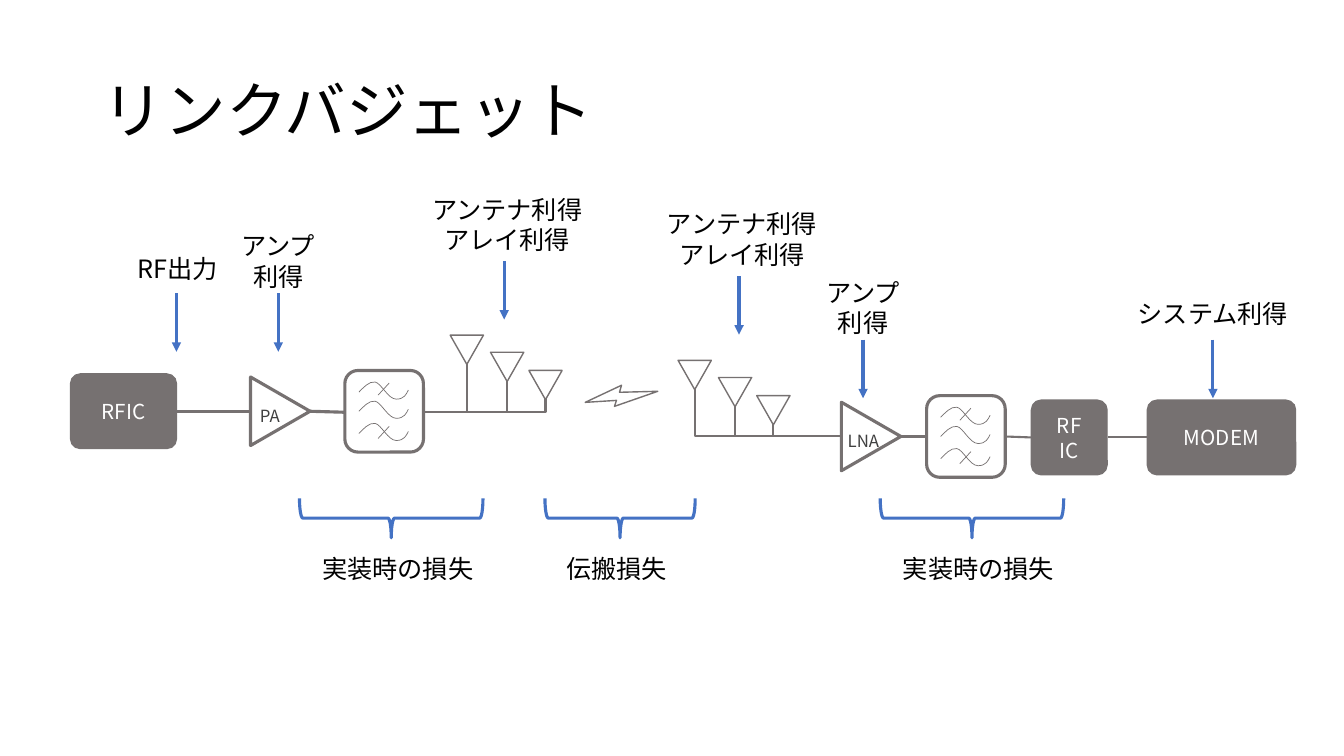
"""Build the link budget slide: transmit chain, receive chain, gains and losses."""
import math
from typing import NamedTuple

from lxml import etree
from pptx import Presentation
from pptx.dml.color import RGBColor
from pptx.enum import shapes, text
from pptx.oxml.ns import qn
from pptx.util import Inches, Pt

FONT = "Noto Sans CJK JP"
GREY, BLUE, WHITE, BLACK, DARK = "767171", "4472C4", "FFFFFF", "000000", "404040"
KIND = shapes.MSO_SHAPE
ALIGN = text.PP_ALIGN
Point = tuple[float, float]


class Block(NamedTuple):
    label: str
    left: float
    top: float
    width: float


class Chain(NamedTuple):
    amp: str
    amp_center: Point
    amp_label: Point
    filter_corner: Point
    bus_start: Point
    first_tip: Point


class Wire(NamedTuple):
    start: Point
    end: Point
    weight: float


class Gain(NamedTuple):
    label: str
    left: float
    top: float
    width: float
    height: float
    arrow: Point


class Loss(NamedTuple):
    label: str
    label_left: float
    brace_center: float
    span: float


BLOCKS = [Block("RFIC", 0.7, 3.71, 1.05), Block("RF\nIC", 10.23, 3.97, 0.75),
          Block("MODEM", 11.38, 3.97, 1.47)]
CHAINS = [
    Chain("PA", (2.78, 4.08), (2.48, 3.98), (3.42, 3.68), (4.19, 4.09), (4.63, 3.61)),
    Chain("LNA", (8.64, 4.33), (8.31, 4.22), (9.19, 3.93), (8.35, 4.33), (6.89, 3.86)),
]
WIRES = [
    Wire((1.75, 4.08), (2.49, 4.08), 2.25), Wire((3.42, 4.09), (3.07, 4.08), 2.25),
    Wire((8.94, 4.33), (9.19, 4.33), 1.5), Wire((10.23, 4.34), (9.96, 4.33), 1.5),
    Wire((10.99, 4.34), (11.38, 4.34), 1.5),
]
GAINS = [
    Gain("RF出力", 1.03, 2.46, 1.46, 0.4, (1.75, 2.91)),
    Gain("アンプ\n利得", 2.03, 2.24, 1.46, 0.71, (2.76, 2.91)),
    Gain("アンテナ利得\nアレイ利得", 4.09, 1.88, 1.88, 0.71, (5, 2.59)),
    Gain("アンテナ利得\nアレイ利得", 6.42, 2.02, 1.88, 0.71, (7.33, 2.74)),
    Gain("アンプ\n利得", 7.83, 2.7, 1.46, 0.71, (8.56, 3.37)),
    Gain("システム利得", 11.07, 2.91, 1.92, 0.4, (12.03, 3.37)),
]
LOSSES = [Loss("実装時の損失", 2.83, 3.88, 1.82), Loss("伝搬損失", 5, 6.15, 1.49),
          Loss("実装時の損失", 8.59, 9.64, 1.82)]
TIP_OFFSETS = [(0, 0), (0.4, 0.17), (0.78, 0.35)]
WAVE = [(0, 0.1), (0.04, 0.06), (0.1, -0.01), (0.16, 0), (0.22, 0.01),
        (0.29, 0.17), (0.37, 0.17), (0.45, 0.17), (0.47, 0.12), (0.49, 0.08)]
BOLT = [(6.52, 3.89), (6.09, 4.04), (6.11, 3.98), (5.8, 4), (6.16, 3.83), (6.14, 3.9)]
BOLT_CENTER, BOLT_ANGLE = (6.16, 3.94), 129.8


def paint(target, color: str) -> None:
    """Apply a solid hex colour to a fill or a font fill."""
    target.solid()
    target.fore_color.rgb = RGBColor.from_string(color)


def dress(shape, color: str, weight: float, fill: str | None) -> None:
    """Set line colour, line width and fill, without a shadow."""
    shape.shadow.inherit = False
    paint(shape.line.fill, color)
    shape.line.width = Pt(weight)
    if fill:
        paint(shape.fill, fill)
    else:
        shape.fill.background()


def write(frame, words: str, size: float, color: str, align) -> None:
    """Fill a text frame with one paragraph per line of words."""
    frame.text = words
    for paragraph in frame.paragraphs:
        paragraph.alignment = align
        paragraph.font.size = Pt(size)
        paragraph.font.name = FONT
        paint(paragraph.font.fill, color)
        defaults = paragraph._p.pPr.find(qn("a:defRPr"))
        etree.SubElement(defaults, qn("a:ea")).set("typeface", FONT)


def add_label(slide, words: str, left: float, top: float, width: float, height: float,
              size: float = 18, color: str = BLACK, align=ALIGN.CENTER) -> None:
    """Add a wrapped text box."""
    box = slide.shapes.add_textbox(*map(Inches, (left, top, width, height)))
    box.text_frame.word_wrap = True
    box.text_frame.auto_size = text.MSO_AUTO_SIZE.SHAPE_TO_FIT_TEXT
    write(box.text_frame, words, size, color, align)


def add_centered(slide, kind, center: Point, width: float, height: float, rotation: float,
                 color: str, weight: float, fill: str | None = None):
    """Add a preset shape around its centre point."""
    left, top = center[0] - width / 2, center[1] - height / 2
    shape = slide.shapes.add_shape(kind, *map(Inches, (left, top, width, height)))
    shape.rotation = rotation
    dress(shape, color, weight, fill)
    return shape


def add_wire(slide, start: Point, end: Point, weight: float, color: str = GREY,
             elbow: bool = False, arrow: bool = False) -> None:
    """Add a straight or one-bend connector, optionally with an arrowhead."""
    kind = shapes.MSO_CONNECTOR.ELBOW if elbow else shapes.MSO_CONNECTOR.STRAIGHT
    wire = slide.shapes.add_connector(kind, *map(Inches, (*start, *end)))
    paint(wire.line.fill, color)
    wire.line.width = Pt(weight)
    properties = wire._element.spPr
    if elbow:
        properties.find(qn("a:prstGeom")).set("prst", "bentConnector2")
    if arrow:
        etree.SubElement(properties.find(qn("a:ln")), qn("a:tailEnd")).set("type", "triangle")
    etree.SubElement(properties, qn("a:effectLst"))


def add_outline(slide, points: list[Point], weight: float, fill: str | None = None):
    """Add a grey freeform, closed when it is filled."""
    (x, y), *rest = [(Inches(px), Inches(py)) for px, py in points]
    builder = slide.shapes.build_freeform(x, y)
    builder.add_line_segments(rest, close=fill is not None)
    shape = builder.convert_to_shape()
    dress(shape, GREY, weight, fill)
    return shape


def add_wave(slide, x: float, y: float) -> None:
    """Add a wave, turning each three line segments into one cubic curve."""
    wave = add_outline(slide, [(x + dx, y + dy) for dx, dy in WAVE], 0.5)
    segments = list(wave._element.iter(qn("a:lnTo")))
    for first in range(0, len(segments), 3):
        curve, *others = segments[first:first + 3]
        curve.tag = qn("a:cubicBezTo")
        for other in others:
            curve.append(other[0])
            other.getparent().remove(other)


def add_bolt(slide) -> None:
    """Add the lightning bolt as an upright outline turned about its centre."""
    (cx, cy), turn = BOLT_CENTER, math.radians(-BOLT_ANGLE)
    cos, sin = math.cos(turn), math.sin(turn)
    upright = [(cx + (x - cx) * cos - (y - cy) * sin, cy + (x - cx) * sin + (y - cy) * cos)
               for x, y in BOLT]
    add_outline(slide, upright, 1, WHITE).rotation = BOLT_ANGLE


def add_filter(slide, corner: Point) -> None:
    """Draw a band-pass filter: three waves, the outer two struck through."""
    x, y = corner
    add_centered(slide, KIND.ROUNDED_RECTANGLE, (x + 0.39, y + 0.4), 0.78, 0.81, 0,
                 GREY, 2.25, WHITE)
    for drop in (0.11, 0.3, 0.52):
        add_wave(slide, x + 0.14, y + drop)
    for drop in (0.24, 0.67):
        add_wire(slide, (x + 0.33, y + drop), (x + 0.44, y + drop - 0.12), 0.5)


def add_chain(slide, chain: Chain) -> None:
    """Draw the amplifier, filter and antenna array of one side."""
    add_centered(slide, KIND.ISOSCELES_TRIANGLE, chain.amp_center, 0.68, 0.59, 90,
                 GREY, 2.25, WHITE)
    add_label(slide, chain.amp, *chain.amp_label, 1, 0.39, 12, DARK, ALIGN.LEFT)
    add_filter(slide, chain.filter_corner)
    for dx, dy in TIP_OFFSETS:
        x, y = chain.first_tip[0] + dx, chain.first_tip[1] + dy
        add_centered(slide, KIND.ISOSCELES_TRIANGLE, (x, y - 0.14), 0.33, 0.29, 180,
                     GREY, 1, WHITE)
        add_wire(slide, chain.bus_start, (x, y), 1.5, elbow=True)


def main() -> None:
    """Build and save the slide."""
    deck = Presentation()
    deck.slide_width, deck.slide_height = Inches(13.33), Inches(7.5)
    slide = deck.slides.add_slide(deck.slide_layouts[5])
    title = slide.shapes.title
    title.left, title.top, title.width, title.height = map(Inches, (0.92, 0.4, 11.5, 1.45))
    title.text_frame.vertical_anchor = text.MSO_ANCHOR.MIDDLE
    write(title.text_frame, "リンクバジェット", 44, BLACK, ALIGN.LEFT)
    title.text_frame.paragraphs[0].line_spacing = 0.9

    for block in BLOCKS:
        center = (block.left + block.width / 2, block.top + 0.37)
        box = add_centered(slide, KIND.ROUNDED_RECTANGLE, center, block.width, 0.74, 0,
                           GREY, 1, GREY)
        box.adjustments[0] = 0.13
        box.text_frame.vertical_anchor = text.MSO_ANCHOR.MIDDLE
        write(box.text_frame, block.label, 14.7, WHITE, ALIGN.CENTER)
    for chain in CHAINS:
        add_chain(slide, chain)
    for wire in WIRES:
        add_wire(slide, *wire)
    add_bolt(slide)
    for gain in GAINS:
        add_label(slide, gain.label, *gain[1:5])
        x, y = gain.arrow
        add_wire(slide, (x, y), (x, y + 0.58), 2.25, BLUE, arrow=True)
    for loss in LOSSES:
        add_centered(slide, KIND.RIGHT_BRACE, (loss.brace_center, 5.14), 0.39, loss.span, 90,
                     BLUE, 2.25)
        add_label(slide, loss.label, loss.label_left, 5.44, 2.23, 0.4)
    deck.save("out.pptx")


if __name__ == "__main__":
    main()
